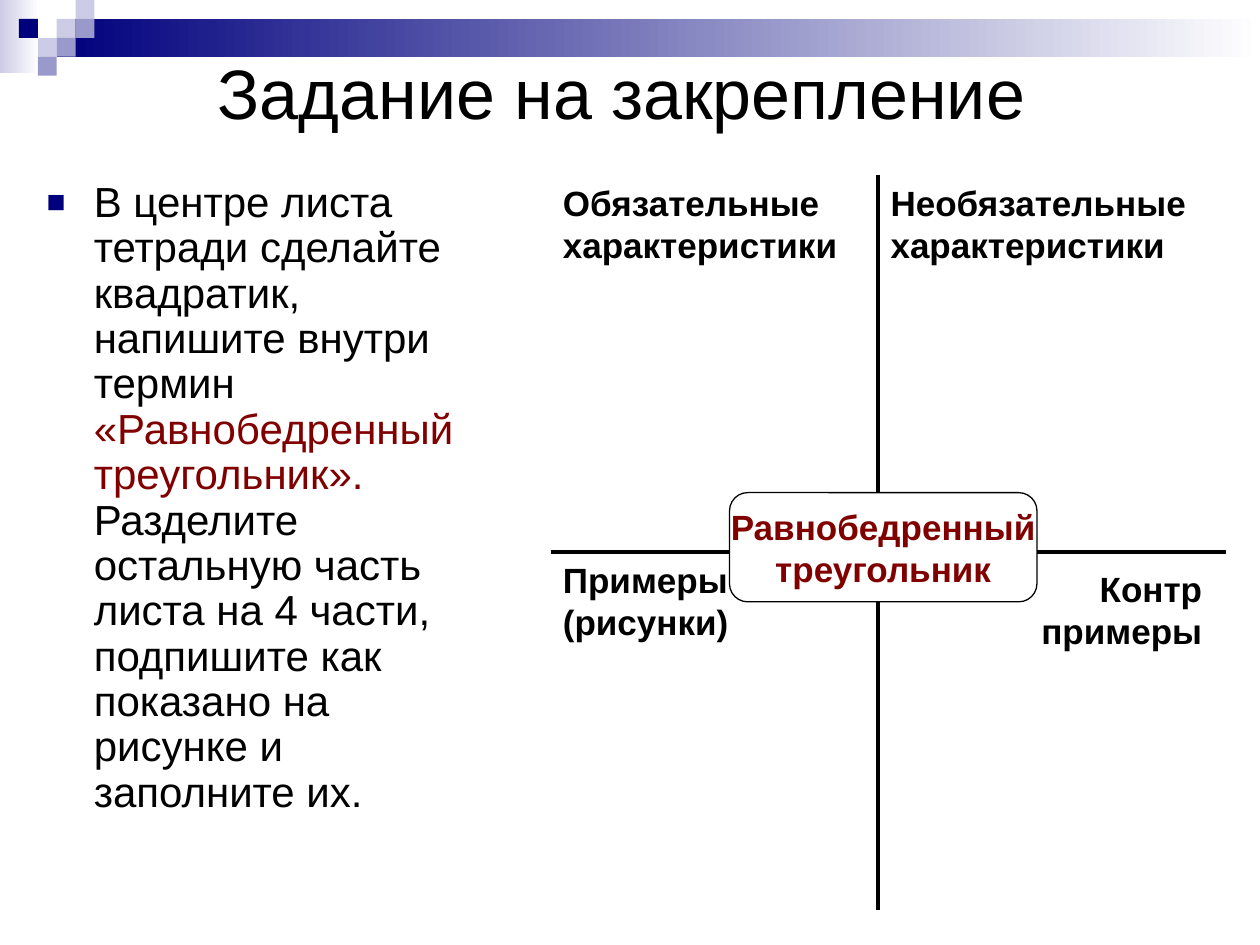
"""Build the practice-task slide with a four-part term diagram."""
from lxml.etree import SubElement
from pptx import Presentation
from pptx.dml.color import RGBColor
from pptx.enum.shapes import MSO_CONNECTOR as Connector, MSO_SHAPE as Shape
from pptx.enum.text import MSO_ANCHOR as Anchor, MSO_AUTO_SIZE as AutoSize, PP_ALIGN as Align
from pptx.oxml.ns import qn
from pptx.util import Pt

COLORS = {
    "navy": "00007D",
    "violet": "9999CC",
    "lilac": "CCCCE6",
    "white": "FFFFFF",
    "black": "000000",
    "maroon": "800000",
}


def rgb(name):
    return RGBColor.from_string(COLORS[name])


class TaskSlide:
    font = "Arial"
    title_size, body_size, label_size = 40, 24, 20

    def __init__(self, deck):
        self.slide = deck.slides.add_slide(deck.slide_layouts[1])

    def place(self, item, left, top, width, height):
        item.left, item.top, item.width, item.height = map(Pt, (left, top, width, height))

    def add_text(self, paragraph, text, size, color="black", bold=False):
        run = paragraph.add_run()
        run.text = text
        run.font.name, run.font.size, run.font.bold = self.font, Pt(size), bold
        run.font.color.rgb = rgb(color)

    def add_lines(self, frame, lines, align, color="black"):
        for number, line in enumerate(lines):
            paragraph = frame.add_paragraph() if number else frame.paragraphs[0]
            paragraph.alignment = align
            self.add_text(paragraph, line, self.label_size, color, bold=True)

    def title(self, text, *box):
        heading = self.slide.shapes.title
        self.place(heading, *box)
        frame = heading.text_frame
        frame.auto_size, frame.vertical_anchor = AutoSize.NONE, Anchor.MIDDLE
        frame.paragraphs[0].alignment = Align.CENTER
        self.add_text(frame.paragraphs[0], text, self.title_size)

    def body(self, parts, *box):
        task = self.slide.placeholders[1]
        self.place(task, *box)
        task.text_frame.auto_size = AutoSize.NONE
        paragraph = task.text_frame.paragraphs[0]
        paragraph.line_spacing, paragraph.space_before = 0.9, Pt(4.8)
        for text, color in parts:
            self.add_text(paragraph, text, self.body_size, color)
        self.bullet(paragraph, 27)

    def bullet(self, paragraph, indent):
        properties = paragraph._p.get_or_add_pPr()
        properties.set("marL", str(Pt(indent)))
        properties.set("indent", str(Pt(-indent)))
        bullet_color = SubElement(properties, qn("a:buClr"))
        SubElement(bullet_color, qn("a:srgbClr"), val=COLORS["navy"])
        SubElement(properties, qn("a:buSzPct"), val="75000")
        SubElement(properties, qn("a:buFont"), typeface=self.font)
        SubElement(properties, qn("a:buChar"), char="■")

    def block(self, color, *box, fade=False):
        block = self.slide.shapes.add_shape(Shape.RECTANGLE, *map(Pt, box))
        block.shadow.inherit = False
        block.line.fill.background()
        if fade:
            block.fill.gradient()
            block.fill.gradient_angle = 0
            for stop, name, position in zip(block.fill.gradient_stops, (color, "white"), (0, 1)):
                stop.color.rgb, stop.position = rgb(name), position
        else:
            block.fill.solid()
            block.fill.fore_color.rgb = rgb(color)

    def term(self, lines, *box):
        term = self.slide.shapes.add_shape(Shape.ROUNDED_RECTANGLE, *map(Pt, box))
        term.shadow.inherit = False
        term.fill.background()
        term.line.color.rgb, term.line.width = rgb("black"), Pt(0.75)
        frame = term.text_frame
        frame.word_wrap, frame.vertical_anchor = False, Anchor.MIDDLE
        self.add_lines(frame, lines, Align.CENTER, "maroon")

    def line(self, *ends):
        axis = self.slide.shapes.add_connector(Connector.STRAIGHT, *map(Pt, ends))
        axis.line.color.rgb, axis.line.width = rgb("black"), Pt(2.25)
        SubElement(axis._element.spPr, qn("a:effectLst"))

    def label(self, lines, *box, align=Align.LEFT):
        label = self.slide.shapes.add_textbox(*map(Pt, box))
        label.text_frame.word_wrap = True
        label.text_frame.auto_size = AutoSize.SHAPE_TO_FIT_TEXT
        self.add_lines(label.text_frame, lines, align)


def main():
    deck = Presentation()
    deck.slide_width, deck.slide_height = Pt(720), Pt(540)
    page = TaskSlide(deck)

    page.block("lilac", 0, 0, 22.3, 41.8, fade=True)
    page.block("navy", 32.4, 10.8, 687.6, 21.6, fade=True)
    tile = 10.8
    mosaic = [
        (3, 1, "lilac"), (4, 0, "lilac"), (4, 1, "violet"), (2, 2, "lilac"),
        (1, 1, "navy"), (3, 2, "violet"), (2, 3, "violet"),
    ]
    for column, row, color in mosaic:
        page.block(color, column * tile, row * tile, tile, tile)

    page.title("Задание на закрепление", 31, 31.7, 648, 41)
    page.body([
        ("В центре листа тетради сделайте квадратик, напишите внутри термин ", "black"),
        ("«Равнобедренный треугольник».", "maroon"),
        (" Разделите остальную часть листа на 4 части, подпишите как "
         "показано на рисунке и заполните их.", "black"),
    ], 19.4, 100, 260.6, 391)

    left, right, top, bottom = 314.6, 700.6, 100, 519.8
    center_x, center_y = 501.8, 315.4
    term_left, term_top, term_width, term_height = 416.9, 281.5, 175.7, 62.4
    page.term(["Равнобедренный", "треугольник"], term_left, term_top, term_width, term_height)
    page.line(center_x, top, center_x, term_top)
    page.line(center_x, bottom, center_x, term_top + term_height)
    page.line(left, center_y, term_left, center_y)
    page.line(term_left + term_width, center_y, right, center_y)

    width, height = 175.7, 55.4
    page.label(["Обязательные характеристики"], left, top, width, height)
    page.label(["Необязательные характеристики"], center_x, top, 193, height)
    page.label(["Примеры", "(рисунки)"], left, center_y, width, height)
    page.label(["Контр", "примеры"], 518.4, 321, width, height, align=Align.RIGHT)

    deck.save("out.pptx")


if __name__ == "__main__":
    main()
